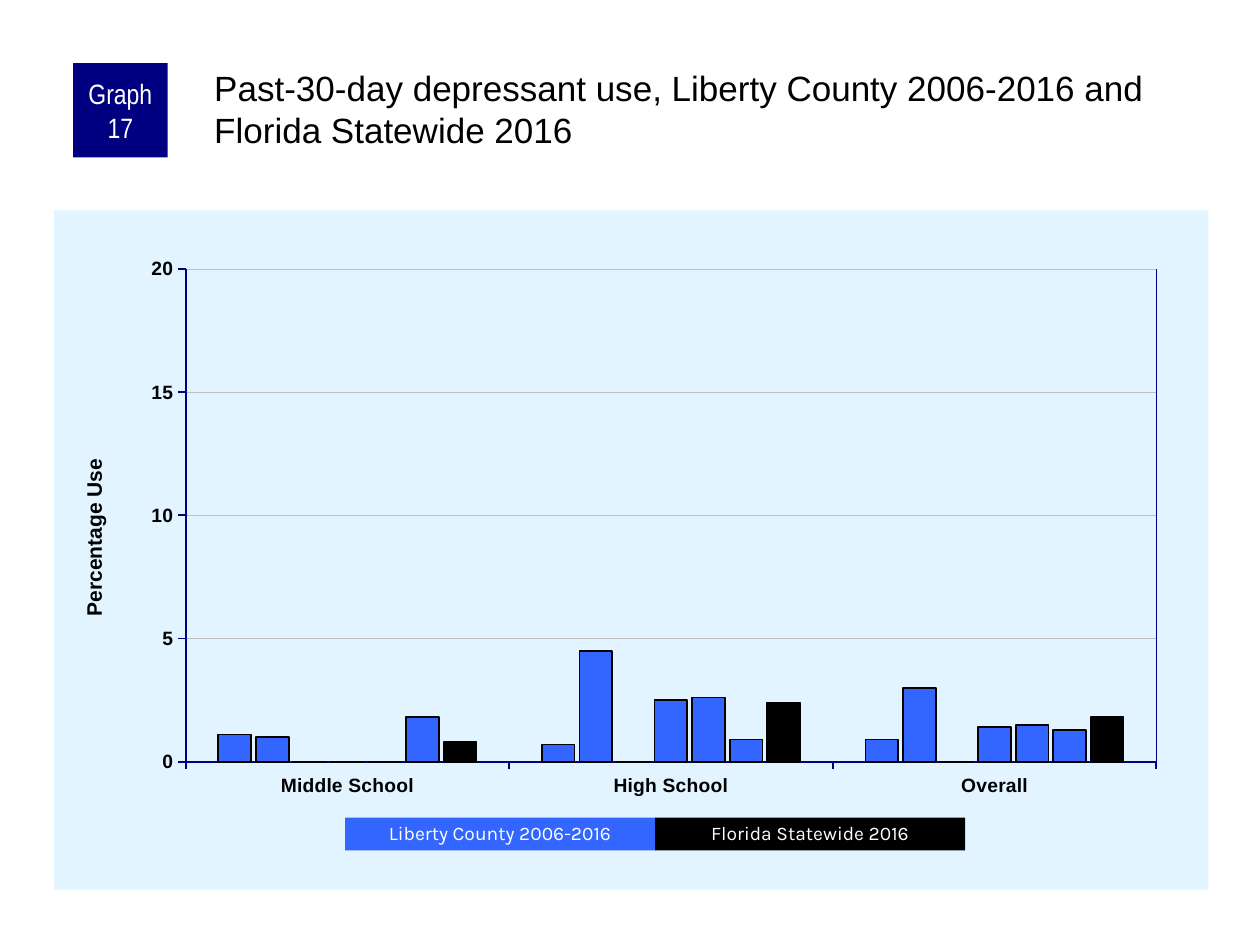
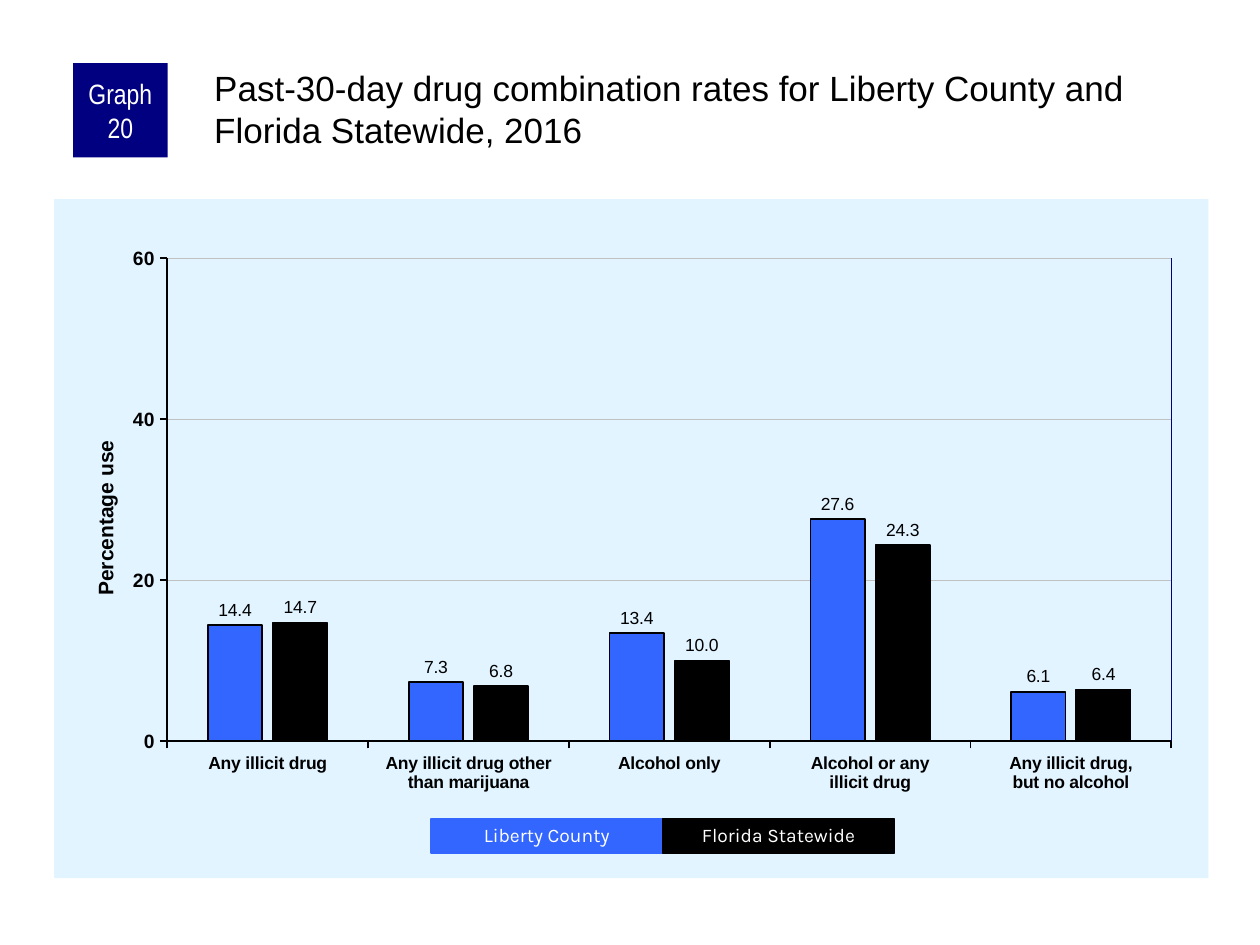
from lxml import etree
from pptx import Presentation
from pptx.chart.data import CategoryChartData
from pptx.dml.color import RGBColor
from pptx.enum.chart import XL_CHART_TYPE as ChartType, XL_LABEL_POSITION as LabelPosition
from pptx.enum.chart import XL_TICK_MARK as TickMark
from pptx.enum.shapes import MSO_CONNECTOR as Connector, MSO_SHAPE as Shape
from pptx.enum.text import MSO_ANCHOR as Anchor, PP_ALIGN as Align
from pptx.oxml import parse_xml
from pptx.oxml.ns import nsdecls, qn
from pptx.util import Inches, Pt

COLORS = {
    "navy": "000080",
    "county": "3366FF",
    "state": "000000",
    "text": "000000",
    "inverse": "FFFFFF",
    "panel": "E1F4FF",
    "grid": "C0C0C0",
}
PANEL_SIZE = (9.16, 5.39)


def rgb(name):
    return RGBColor.from_string(COLORS[name])


def style_font(font, size, color="text", name="Arial", bold=False):
    font.size = Pt(size)
    font.name = name
    font.bold = bold
    font.color.rgb = rgb(color)


def style_line(line, color, width):
    line.color.rgb = rgb(color)
    line.width = Pt(width)


def write_text(shape, text, size, color, name, align, insets, line_spacing=None):
    frame = shape.text_frame
    frame.word_wrap = True
    frame.margin_left, frame.margin_top, frame.margin_right, frame.margin_bottom = map(Inches, insets)
    frame.text = text
    paragraph = frame.paragraphs[0]
    paragraph.alignment = align
    if line_spacing:
        paragraph.line_spacing = line_spacing
    style_font(paragraph.runs[0].font, size, color, name)


def add_block(slide, box, fill, text, size, font_name, insets, line_spacing=None):
    block = slide.shapes.add_shape(Shape.RECTANGLE, *map(Inches, box))
    block.shadow.inherit = False
    block.fill.solid()
    block.fill.fore_color.rgb = rgb(fill)
    block.line.fill.background()
    write_text(block, text, size, "inverse", font_name, Align.CENTER, insets, line_spacing)
    block.text_frame.vertical_anchor = Anchor.MIDDLE
    return block


def add_header(slide, number, title):
    add_block(slide, (0.58, 0.5, 0.75, 0.75), "navy", f"Graph {number}", 16,
              "Arial Narrow", (0.05, 0, 0.05, 0))
    heading = slide.shapes.add_textbox(*map(Inches, (1.67, 0.5, 7.92, 0.83)))
    write_text(heading, title, 20, "text", "Arial", Align.LEFT, (0.03, 0.03, 0, 0))


def add_legend(slide, box, entries, outlined):
    left, top, width, height = box
    for index, (text, color) in enumerate(zip(entries, ("county", "state"))):
        entry_box = (left + index * width, top, width, height)
        entry = add_block(slide, entry_box, color, text, 11, "Karla", (0.1, 0.05, 0.1, 0.05), 0.9)
        if outlined:
            style_line(entry.line, color, 0.75)


def manual_layout(values, inner=False):
    target = '<c:layoutTarget val="inner"/>' if inner else ""
    modes = '<c:xMode val="edge"/><c:yMode val="edge"/>'
    numbers = "".join(f'<c:{key} val="{value}"/>' for key, value in zip("xywh", values))
    return parse_xml(f'<c:layout {nsdecls("c")}><c:manualLayout>{target}{modes}{numbers}'
                     "</c:manualLayout></c:layout>")


def area_format(fill=None):
    paint = f'<a:solidFill><a:srgbClr val="{COLORS[fill]}"/></a:solidFill>' if fill else "<a:noFill/>"
    return parse_xml(f'<c:spPr {nsdecls("c", "a")}>{paint}<a:ln><a:noFill/></a:ln></c:spPr>')


def format_areas(chart, plot_box):
    chart_element = chart._chartSpace.find(qn("c:chart"))
    chart_element.addnext(area_format("panel"))
    plot_area = chart_element.find(qn("c:plotArea"))
    for layout in plot_area.findall(qn("c:layout")):
        plot_area.remove(layout)
    plot_area.insert(0, manual_layout(plot_box, inner=True))
    plot_area.append(area_format())


def format_axes(chart, spec_axis, axis_color, category_size):
    label, position, maximum, step = spec_axis
    for axis, size in ((chart.category_axis, category_size), (chart.value_axis, 11)):
        axis.major_tick_mark = TickMark.OUTSIDE
        axis.minor_tick_mark = TickMark.NONE
        style_font(axis.tick_labels.font, size, bold=True)
        style_line(axis.format.line, axis_color, 1)
    value_axis = chart.value_axis
    value_axis.minimum_scale, value_axis.maximum_scale, value_axis.major_unit = 0, maximum, step
    style_line(value_axis.major_gridlines.format.line, "grid", 0.25)
    title = value_axis.axis_title
    title.text_frame.text = label
    style_font(title.text_frame.paragraphs[0].runs[0].font, 12, bold=True)
    element = title._element
    for layout in element.findall(qn("c:layout")):
        element.remove(layout)
    element.find(qn("c:tx")).addnext(manual_layout(position))


def format_series(chart, gap, overlap, labelled):
    plot = chart.plots[0]
    plot.gap_width, plot.overlap, plot.vary_by_categories = gap, overlap, False
    all_series = list(plot.series)
    for series in all_series:
        series.format.fill.solid()
        series.format.fill.fore_color.rgb = rgb("state" if series is all_series[-1] else "county")
        style_line(series.format.line, "text", 1)
        series.invert_if_negative = False
        if labelled:
            labels = series.data_labels
            labels.show_value = True
            labels.number_format = "0.0"
            labels.number_format_is_linked = False
            labels.position = LabelPosition.OUTSIDE_END
            style_font(labels.font, 10)


def add_right_edge(slide, origin, plot_box):
    left, top = origin
    width, height = PANEL_SIZE
    plot_left, plot_top, plot_width, plot_height = plot_box
    x = Inches(left + (plot_left + plot_width) * width)
    start_y = Inches(top + plot_top * height)
    end_y = Inches(top + (plot_top + plot_height) * height)
    edge = slide.shapes.add_connector(Connector.STRAIGHT, x, start_y, x, end_y)
    style_line(edge.line, "navy", 1)
    etree.SubElement(edge._element.spPr, qn("a:effectLst"))


def add_column_panel(slide, origin, categories, rows, plot_box, value_axis,
                     axis_color, category_size, gap, overlap, labelled=False):
    data = CategoryChartData()
    data.categories = categories
    for number, values in enumerate(rows, 1):
        data.add_series(f"Series {number}", values)
    frame = slide.shapes.add_chart(ChartType.COLUMN_CLUSTERED,
                                   *map(Inches, origin + PANEL_SIZE), data)
    chart = frame.chart
    chart.has_legend = chart.has_title = False
    style_font(chart.font, 10)
    format_areas(chart, plot_box)
    format_axes(chart, value_axis, axis_color, category_size)
    format_series(chart, gap, overlap, labelled)
    add_right_edge(slide, origin, plot_box)


def build_depressant_slide(slide):
    add_column_panel(
        slide, (0.43, 1.67), ["Middle School", "High School", "Overall"],
        [(1.1, 0.7, 0.9), (1, 4.5, 3), (0, 0, 0), (0, 2.5, 1.4),
         (0, 2.6, 1.5), (1.8, 0.9, 1.3), (0.8, 2.4, 1.8)],
        plot_box=(0.114, 0.086, 0.841, 0.726),
        value_axis=("Percentage Use", (0.02, 0.36), 20, 5),
        axis_color="navy", category_size=11, gap=200, overlap=-15)
    add_header(slide, 17, "Past-30-day depressant use, Liberty County 2006-2016 and Florida Statewide 2016")
    add_legend(slide, (2.74, 6.49, 2.46, 0.26),
               ("Liberty County 2006-2016", "Florida Statewide 2016"), outlined=False)


def build_combination_slide(slide):
    add_column_panel(
        slide, (0.43, 1.58),
        ["Any illicit drug", "Any illicit drug other than marijuana", "Alcohol only",
         "Alcohol or any\nillicit drug", "Any illicit drug,\nbut no alcohol"],
        [(14.4, 7.3, 13.4, 27.6, 6.1), (14.7, 6.8, 10, 24.3, 6.4)],
        plot_box=(0.098, 0.087, 0.87, 0.711),
        value_axis=("Percentage use", (0.03, 0.35), 60, 20),
        axis_color="text", category_size=10, gap=150, overlap=-20, labelled=True)
    add_header(slide, 20, "Past-30-day drug combination rates for Liberty County and Florida Statewide, 2016")
    add_legend(slide, (3.42, 6.5, 1.84, 0.27), ("Liberty County", "Florida Statewide"), outlined=True)


def main():
    presentation = Presentation()
    presentation.slide_width, presentation.slide_height = Inches(10), Inches(7.5)
    for build in (build_depressant_slide, build_combination_slide):
        build(presentation.slides.add_slide(presentation.slide_layouts[6]))
    presentation.save("out.pptx")


if __name__ == "__main__":
    main()
